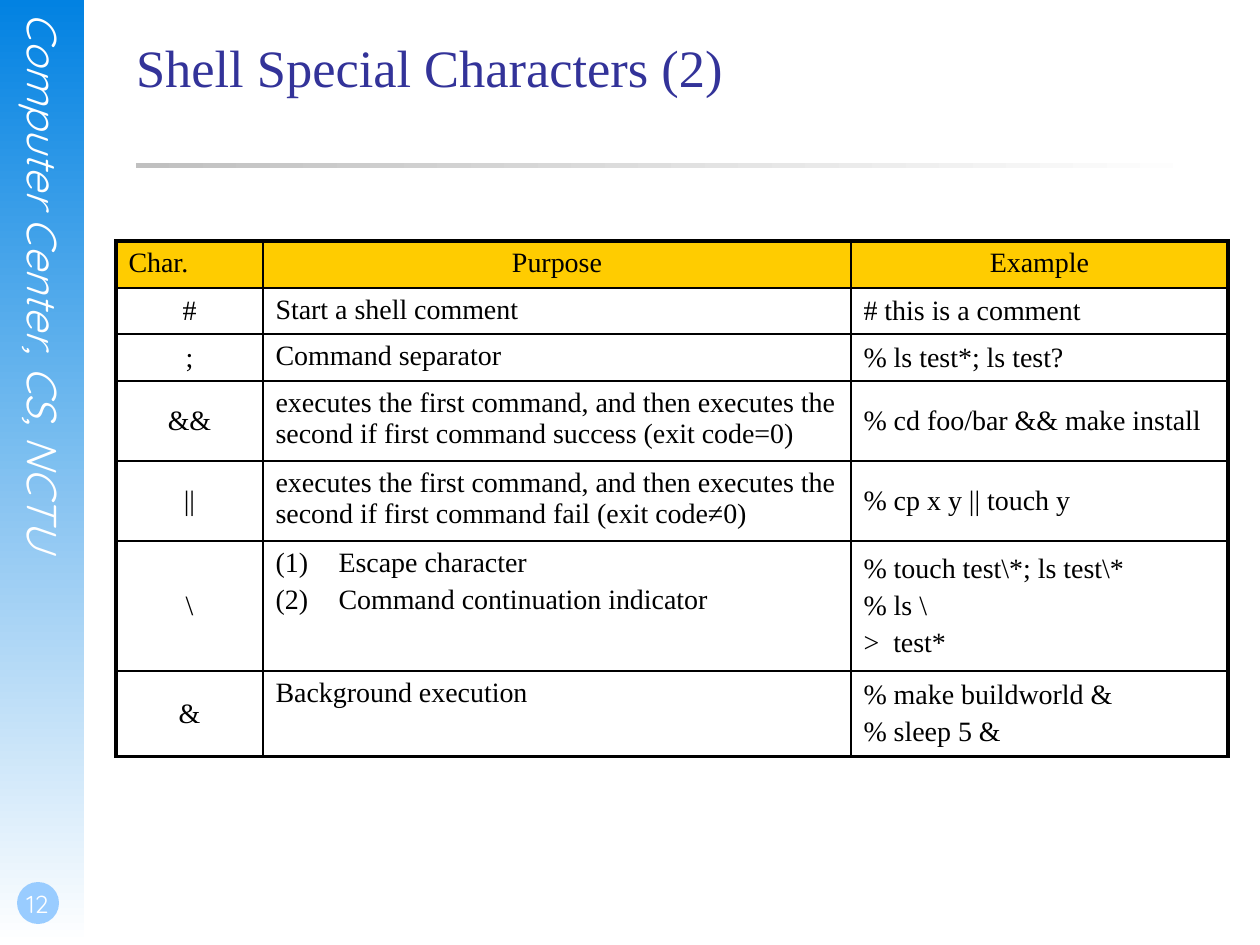
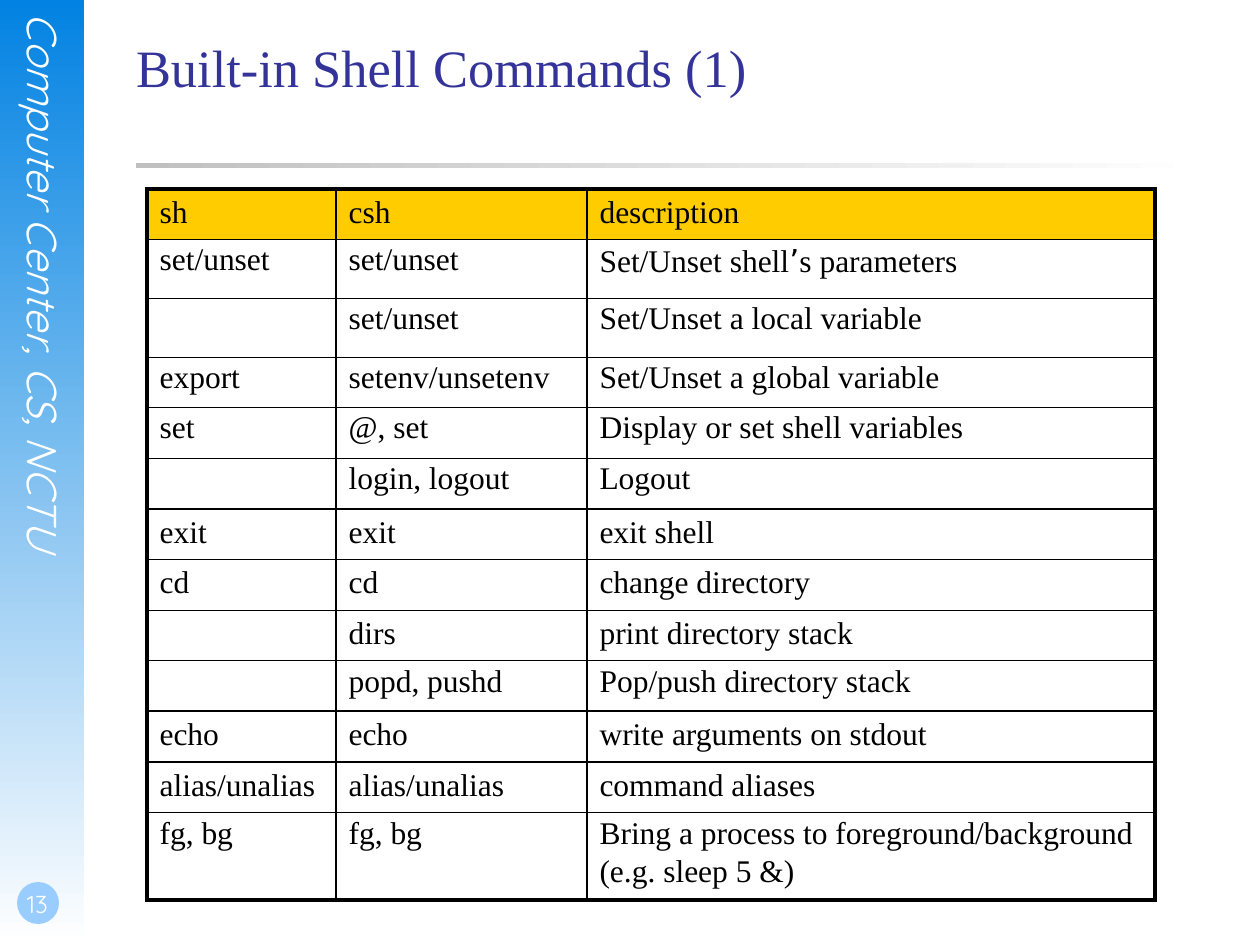
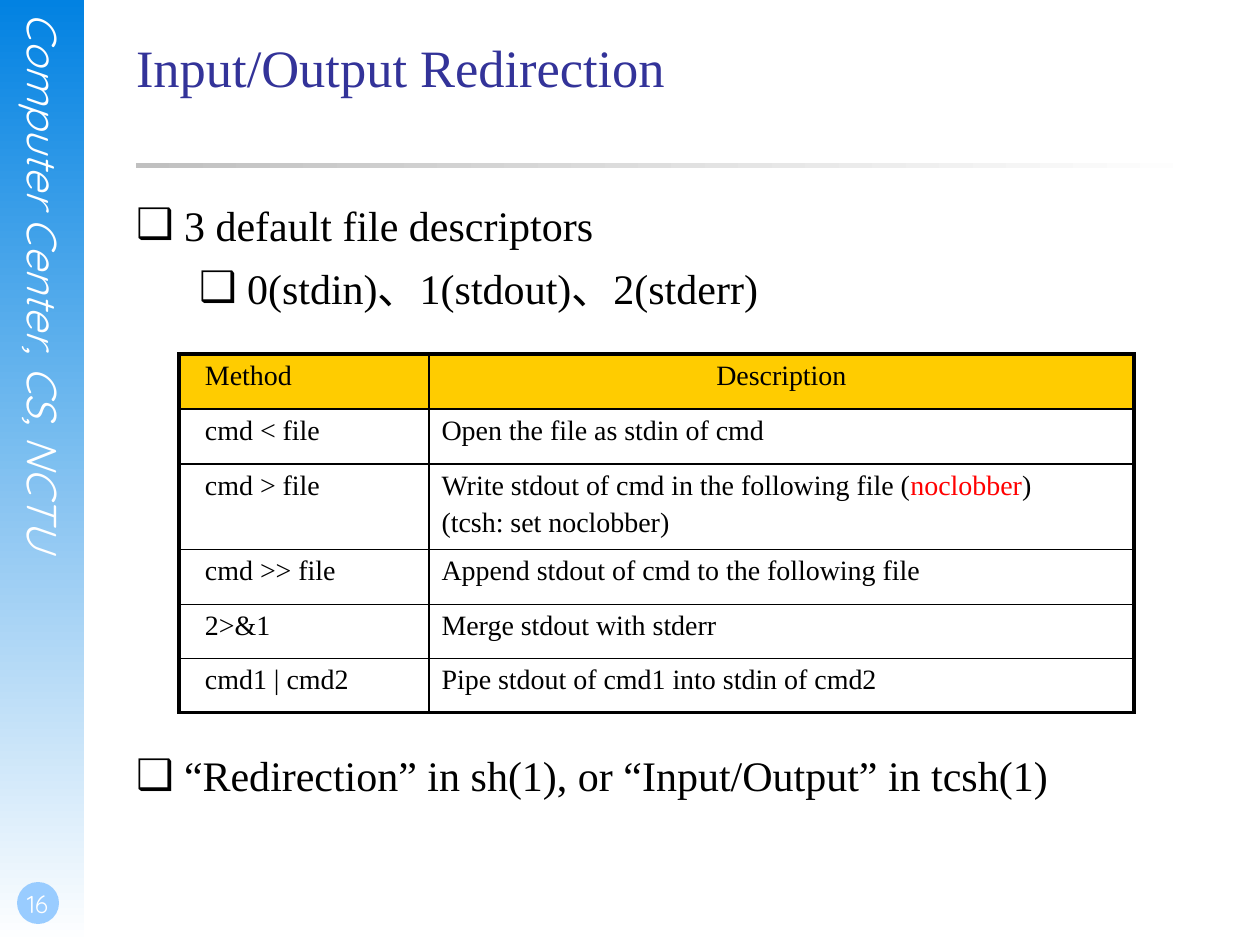
"""Build three slides about Unix shells with a shared side band, title and table style."""
from lxml.etree import SubElement
from pptx import Presentation
from pptx.dml.color import RGBColor
from pptx.enum.shapes import MSO_SHAPE
from pptx.enum.text import MSO_ANCHOR, MSO_AUTO_SIZE, PP_ALIGN
from pptx.oxml.ns import qn
from pptx.util import Pt

EMU_PER_PX = 914400 / 126
WHITE = RGBColor(0xFF, 0xFF, 0xFF)
BLACK = RGBColor(0x00, 0x00, 0x00)
RED = RGBColor(0xFF, 0x00, 0x00)
BAND_BLUE = RGBColor(0x02, 0x82, 0xE2)
BADGE_BLUE = RGBColor(0x99, 0xCC, 0xFF)
TITLE_BLUE = RGBColor(0x33, 0x33, 0x99)
RULE_GRAY = RGBColor(0xC0, 0xC0, 0xC0)
HEADER_GOLD = RGBColor(0xFF, 0xCC, 0x00)
SERIF = "Times New Roman"
SANS = "Quicksand"
QUOTE_FONT = "DejaVu Sans"
TITLE_AND_BODY, TITLE_ONLY = 1, 5

CHARACTER_ROWS = [
    ("Char.", "Purpose", "Example"),
    ("#", "Start a shell comment", "# this is a comment"),
    (";", "Command separator", "% ls test*; ls test?"),
    ("&&", "executes the first command, and then executes the second if first command success (exit code=0)",
     "% cd foo/bar && make install"),
    ("||", "executes the first command, and then executes the second if first command fail (exit code≠0)",
     "% cp x y || touch y"),
    ("\\", "Escape character\nCommand continuation indicator",
     "% touch test\\*; ls test\\*\n% ls \\\n>  test*"),
    ("&", "Background execution", "% make buildworld &\n% sleep 5 &"),
]
COMMAND_ROWS = [
    ("sh", "csh", "description"),
    ("set/unset", "set/unset", "Set/Unset shell’s parameters"),
    ("", "set/unset", "Set/Unset a local variable"),
    ("export", "setenv/unsetenv", "Set/Unset a global variable"),
    ("set", "@, set", "Display or set shell variables"),
    ("", "login, logout", "Logout"),
    ("exit", "exit", "exit shell"),
    ("cd", "cd", "change directory"),
    ("", "dirs", "print directory stack"),
    ("", "popd, pushd", "Pop/push directory stack"),
    ("echo", "echo", "write arguments on stdout"),
    ("alias/unalias", "alias/unalias", "command aliases"),
    ("fg, bg", "fg, bg", "Bring a process to foreground/background\n(e.g. sleep 5 &)"),
]
TIGHT_COMMAND_ROWS = (1, 2, 3, 4, 5, 9, 12)
REDIRECTION_ROWS = [
    ("Method", "Description"),
    ("cmd < file", "Open the file as stdin of cmd"),
    ("cmd > file", "Write stdout of cmd in the following file (noclobber)\n(tcsh: set noclobber)"),
    ("cmd >> file", "Append stdout of cmd to the following file"),
    ("2>&1", "Merge stdout with stderr"),
    ("cmd1 | cmd2", "Pipe stdout of cmd1 into stdin of cmd2"),
]


def px(*lengths):
    """Turn pixel lengths into a list of EMU."""
    return [round(length * EMU_PER_PX) for length in lengths]


class ShellDeck:
    """Hold the deck style and the slide being built."""

    def __init__(self):
        """Start an empty deck of the right size."""
        self.deck = Presentation()
        self.deck.slide_width, self.deck.slide_height = px(1260, 945)
        self.slide = None

    def page(self, title, number, layout=TITLE_ONLY):
        """Add a slide with its band, page number, rule and title."""
        self.slide = self.deck.slides.add_slide(self.deck.slide_layouts[layout])
        self.shape(MSO_SHAPE.RECTANGLE, (0, 0, 84, 945), BAND_BLUE, 270)
        banner = self.text("Computer Center, CS, NCTU", (19, 13, 50, 644), 24)
        banner.text_frame.paragraphs[0].runs[0].font.italic = True
        banner.text_frame._txBody.bodyPr.set("vert", "eaVert")
        self.shape(MSO_SHAPE.OVAL, (17, 882, 42, 42), BADGE_BLUE)
        badge = self.text(str(number), (0, 861, 73, 63), 14, (2, 0, 0, 6)).text_frame
        badge.vertical_anchor = MSO_ANCHOR.BOTTOM
        badge.paragraphs[0].alignment = PP_ALIGN.CENTER
        self.shape(MSO_SHAPE.RECTANGLE, (136, 163, 1071, 5), RULE_GRAY, 0)
        frame = self.placeholder(self.slide.shapes.title, (136, 35, 1071, 158))
        frame.text = title
        frame.paragraphs[0].alignment = PP_ALIGN.LEFT
        self.style(frame.paragraphs[0], 30, TITLE_BLUE)

    def shape(self, kind, place, color, angle=None):
        """Draw a plain shape, fading to white when an angle is given."""
        shape = self.slide.shapes.add_shape(kind, *px(*place))
        shape.shadow.inherit = False
        shape.line.fill.background()
        if angle is None:
            shape.fill.solid()
            shape.fill.fore_color.rgb = color
        else:
            shape.fill.gradient()
            shape.fill.gradient_angle = angle
            for stop, shade in zip(shape.fill.gradient_stops, (color, WHITE)):
                stop.color.rgb = shade

    def text(self, words, place, size, margins=(0, 0, 0, 0)):
        """Add a text box in the white band lettering."""
        box = self.slide.shapes.add_textbox(*px(*place))
        self.margins(box.text_frame, margins)
        box.text_frame.word_wrap = True
        box.text_frame.text = words
        self.style(box.text_frame.paragraphs[0], size, WHITE, SANS)
        return box

    def placeholder(self, holder, place):
        """Move a placeholder and clear its margins."""
        holder.left, holder.top, holder.width, holder.height = px(*place)
        frame = holder.text_frame
        self.margins(frame, (0, 0, 0, 0))
        frame.vertical_anchor = MSO_ANCHOR.TOP
        frame.auto_size = MSO_AUTO_SIZE.NONE
        return frame

    def margins(self, target, sides):
        """Set left, top, right and bottom margins."""
        target.margin_left, target.margin_top, target.margin_right, target.margin_bottom = px(*sides)

    def style(self, para, size, color=BLACK, font=SERIF):
        """Format every run of a paragraph."""
        for span in para.runs:
            self.style_span(span, size, color, font)

    def style_span(self, span, size, color=BLACK, font=SERIF):
        """Format one run."""
        span.font.size = Pt(size)
        span.font.name = font
        span.font.color.rgb = color

    def bullet(self, para, indent, hang, tag, **attributes):
        """Give a paragraph a hanging bullet or number."""
        properties = para._p.get_or_add_pPr()
        left, back = px(indent, -hang)
        properties.set("marL", str(left))
        properties.set("indent", str(back))
        SubElement(properties, qn(tag), attributes)

    def bullets(self, items, place):
        """Fill the body with (text, level, space before) items."""
        frame = self.placeholder(self.slide.placeholders[1], place)
        frame.text = "\n".join(words for words, _, _ in items)
        for para, (_, level, space) in zip(frame.paragraphs, items):
            para.level = level
            para.space_before = Pt(space)
            self.bullet(para, 48 + 63 * level, 48, "a:buChar", char="❑")
            self.style(para, 24)

    def accent(self, para, word, size, color=BLACK, font=SERIF):
        """Set one word of a paragraph apart by colour or font."""
        before, middle, after = para.text.partition(word)
        para.text = before
        for piece in (middle, after):
            para.add_run().text = piece
        self.style(para, size)
        self.style_span(para.runs[1], size, color, font)

    def border(self, cell, outer_sides):
        """Draw thick outer and thin inner cell borders."""
        properties = cell._tc.get_or_add_tcPr()
        for side, outer in zip("LRTB", outer_sides):
            line = SubElement(properties, qn(f"a:ln{side}"), w=str(Pt(2.25 if outer else 1)))
            SubElement(SubElement(line, qn("a:solidFill")), qn("a:srgbClr"), val=str(BLACK))

    def table(self, rows, corner, widths, heights, size, centered_header=(), tight_rows=()):
        """Add a bordered table with a gold header row."""
        place = px(*corner, sum(widths), sum(heights))
        table = self.slide.shapes.add_table(len(rows), len(widths), *place).table
        table.first_row = table.horz_banding = False
        for column, width in zip(table.columns, px(*widths)):
            column.width = width
        for row, height in zip(table.rows, px(*heights)):
            row.height = height
        for r, row in enumerate(rows):
            for c, words in enumerate(row):
                cell = table.cell(r, c)
                cell.text = words
                self.border(cell, (c == 0, c == len(row) - 1, r == 0, r == len(rows) - 1))
                if r == 0:
                    cell.fill.solid()
                    cell.fill.fore_color.rgb = HEADER_GOLD
                else:
                    cell.fill.background()
                for para in cell.text_frame.paragraphs:
                    para.space_before = Pt(round(size * 0.21, 2))
                    if r in tight_rows:
                        para.line_spacing = 0.9
                    if r == 0 and c in centered_header:
                        para.alignment = PP_ALIGN.CENTER
                    self.style(para, size)
        return table


def special_characters(show):
    """Build the slide on special characters."""
    show.page("Shell Special Characters (2)", 12)
    table = show.table(CHARACTER_ROWS, (116, 241), (147, 588, 377),
                       (47, 46, 47, 79, 80, 130, 82), 16, centered_header=(1, 2))
    for r in range(1, len(CHARACTER_ROWS)):
        for c in (0, 2):
            table.cell(r, c).vertical_anchor = MSO_ANCHOR.MIDDLE
        table.cell(r, 0).text_frame.paragraphs[0].alignment = PP_ALIGN.CENTER
    for para in table.cell(5, 1).text_frame.paragraphs:
        show.bullet(para, 63, 63, "a:buAutoNum", type="arabicParenBoth")


def builtin_commands(show):
    """Build the slide on built-in commands."""
    show.page("Built-in Shell Commands (1)", 13)
    heights = [50, 59, 59] + [50, 51, 50] * 3 + [83]
    table = show.table(COMMAND_ROWS, (147, 189), (189, 251, 568), heights, 18,
                       tight_rows=TIGHT_COMMAND_ROWS)
    show.accent(table.cell(1, 2).text_frame.paragraphs[0], "’", 18, font=QUOTE_FONT)


def redirection(show):
    """Build the slide on input and output redirection."""
    show.page("Input/Output Redirection", 16, TITLE_AND_BODY)
    show.bullets([
        ("3 default file descriptors", 0, 7.2),
        ("0(stdin)、1(stdout)、2(stderr)", 1, 7.2),
        ("“Redirection” in sh(1), or “Input/Output” in tcsh(1)", 0, 250),
    ], (136, 199, 1071, 640))
    table = show.table(REDIRECTION_ROWS, (179, 354), (250, 705),
                       (55, 55, 82, 55, 54, 54), 16, centered_header=(1,))
    for r in range(len(REDIRECTION_ROWS)):
        table.cell(r, 0).margin_left = px(26)[0]
    show.accent(table.cell(2, 1).text_frame.paragraphs[0], "noclobber", 16, color=RED)


def main():
    """Build and save the deck."""
    show = ShellDeck()
    special_characters(show)
    builtin_commands(show)
    redirection(show)
    show.deck.save("out.pptx")


if __name__ == "__main__":
    main()
